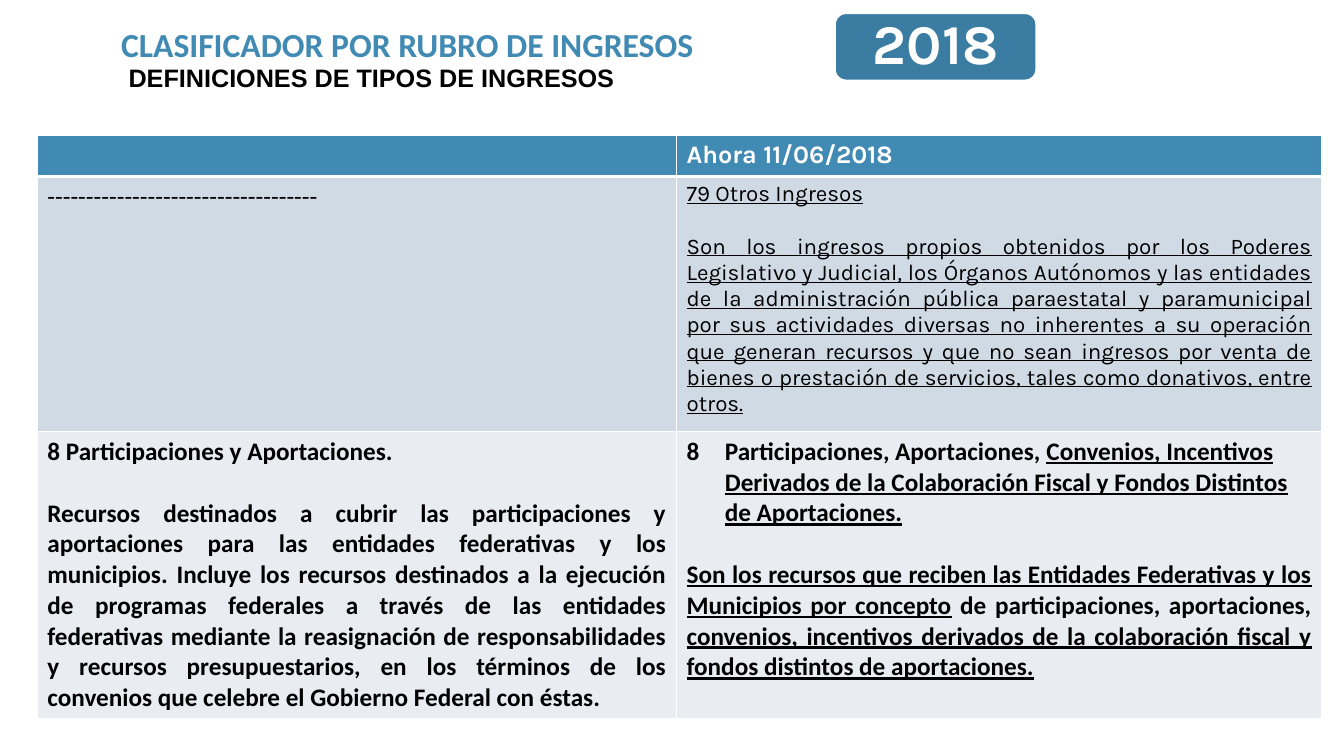
from lxml.etree import SubElement
from pptx import Presentation
from pptx.dml.color import RGBColor
from pptx.enum.shapes import MSO_SHAPE
from pptx.enum.text import MSO_ANCHOR, MSO_AUTO_SIZE, PP_ALIGN
from pptx.oxml import parse_xml
from pptx.oxml.ns import nsdecls, qn
from pptx.util import Inches, Pt

COLORS = {
    "blue": "418AB3", "badge": "3B7DA2", "white": "FFFFFF",
    "black": "000000", "band": "CFDAE5", "light": "E9EDF2",
}
COLUMN_WIDTHS = (6.34, 6.4)
ROW_HEIGHTS = (0.41, 2.53, 2.8)
ROW_FILLS = ("blue", "band", "light")

# A cell is a list of paragraphs; a paragraph is a list of (text, underlined).
OTHER_INCOME = [
    [("79 Otros Ingresos", True)],
    [("Son los ingresos propios obtenidos por los Poderes Legislativo y Judicial, "
      "los Órganos Autónomos y las entidades de la administración pública paraestatal "
      "y paramunicipal por sus actividades diversas no inherentes a su operación que "
      "generan recursos y que no sean ingresos por venta de bienes o prestación de "
      "servicios, tales como donativos, entre otros.", True)],
]
SHARES_BEFORE = [
    [("8 Participaciones y Aportaciones.", False)],
    [("Recursos destinados a cubrir las participaciones y aportaciones para las "
      "entidades federativas y los municipios. Incluye los recursos destinados a la "
      "ejecución de programas federales a través de las entidades federativas mediante "
      "la reasignación de responsabilidades y recursos presupuestarios, en los términos "
      "de los convenios que celebre el Gobierno Federal con éstas.", False)],
]
SHARES_NOW = [
    [("Participaciones, Aportaciones, ", False),
     ("Convenios, Incentivos Derivados de la Colaboración Fiscal y Fondos Distintos "
      "de Aportaciones.", True)],
    [("Son los recursos que reciben las Entidades Federativas y los Municipios por "
      "concepto", True),
     (" de participaciones, aportaciones, ", False),
     ("convenios, incentivos derivados de la colaboración fiscal y fondos distintos "
      "de aportaciones.", True)],
]


def rgb(name):
    return RGBColor.from_string(COLORS[name])


def add_span(para, text, font, size, color, bold=True, underline=False):
    span = para.add_run()
    span.text = text
    span.font.name = font
    span.font.size = Pt(size)
    span.font.bold = bold
    span.font.underline = underline
    span.font.color.rgb = rgb(color)


def place(shape, left, top, width, height):
    shape.left, shape.top = Inches(left), Inches(top)
    shape.width, shape.height = Inches(width), Inches(height)


def write_heading(shape, text, font, size, color, anchor=MSO_ANCHOR.TOP):
    frame = shape.text_frame
    frame.word_wrap = True
    frame.auto_size = MSO_AUTO_SIZE.NONE
    frame.vertical_anchor = anchor
    para = frame.paragraphs[0]
    para.alignment = PP_ALIGN.CENTER
    para.line_spacing = 0.9
    add_span(para, text, font, size, color)


def add_headings(page, left, top):
    title = page.shapes.title
    place(title, left, top, 7.74, 0.46)
    write_heading(title, "CLASIFICADOR POR RUBRO DE INGRESOS", "Calibri", 24, "blue")
    subtitle = page.shapes.add_textbox(
        Inches(left + 0.36), Inches(top + 0.37), Inches(6.31), Inches(0.37))
    write_heading(subtitle, "DEFINICIONES DE TIPOS DE INGRESOS", "Arial", 18, "black")


def add_year_badge(page, left, top, width, height):
    badge = page.shapes.add_shape(
        MSO_SHAPE.ROUNDED_RECTANGLE,
        Inches(left), Inches(top), Inches(width), Inches(height))
    badge.shadow.inherit = False
    badge.fill.solid()
    badge.fill.fore_color.rgb = rgb("badge")
    badge.line.color.rgb = rgb("white")
    badge.line.width = Pt(1.5)
    write_heading(badge, "2018", "Karla", 40, "white", MSO_ANCHOR.MIDDLE)


def style_cell(cell, fill, bottom=1):
    """Fill the cell and give it white borders, the lower one of its own width."""
    cell.fill.solid()
    cell.fill.fore_color.rgb = rgb(fill)
    properties = cell._tc.get_or_add_tcPr()
    for index, side in enumerate("LRTB"):
        points = bottom if side == "B" else 1
        properties.insert(index, parse_xml(
            f'<a:ln{side} {nsdecls("a")} w="{Pt(points)}"><a:solidFill>'
            f'<a:srgbClr val="{COLORS["white"]}"/></a:solidFill></a:ln{side}>'))


def write_cell(cell, paragraphs, font, size, gap=0, color="black", bold=True):
    frame = cell.text_frame
    for index, spans in enumerate(paragraphs):
        para = frame.add_paragraph() if index else frame.paragraphs[0]
        if index:
            para.alignment = PP_ALIGN.JUSTIFY
            para.space_before = Pt(gap)
        for text, underline in spans:
            add_span(para, text, font, size, color, bold, underline)


def number_paragraph(para, start):
    properties = para._p.get_or_add_pPr()
    properties.set("marL", str(Inches(0.38)))
    properties.set("indent", str(-Inches(0.38)))
    SubElement(properties, qn("a:buFont"), typeface="+mj-lt")
    SubElement(properties, qn("a:buAutoNum"), type="arabicPlain", startAt=str(start))


def add_definitions_table(page, left, top):
    table = page.shapes.add_table(
        len(ROW_HEIGHTS), len(COLUMN_WIDTHS), Inches(left), Inches(top),
        Inches(sum(COLUMN_WIDTHS)), Inches(sum(ROW_HEIGHTS))).table
    for column, width in zip(table.columns, COLUMN_WIDTHS):
        column.width = Inches(width)
    for row, height, fill in zip(table.rows, ROW_HEIGHTS, ROW_FILLS):
        row.height = Inches(height)
        for cell in row.cells:
            style_cell(cell, fill, bottom=3 if fill == "blue" else 1)

    write_cell(table.cell(0, 1), [[("Ahora 11/06/2018", False)]], "Karla", 18, color="white")
    write_cell(table.cell(1, 0), [[("-" * 35, False)]], "Calibri", 18, bold=False)
    write_cell(table.cell(1, 1), OTHER_INCOME, "Karla", 16, gap=18.7, bold=False)
    write_cell(table.cell(2, 0), SHARES_BEFORE, "Calibri", 18, gap=22)
    write_cell(table.cell(2, 1), SHARES_NOW, "Calibri", 18, gap=22)
    number_paragraph(table.cell(2, 1).text_frame.paragraphs[0], 8)


def main():
    deck = Presentation()
    deck.slide_width, deck.slide_height = Inches(13.33), Inches(7.5)
    page = deck.slides.add_slide(deck.slide_layouts[5])
    add_headings(page, 0.17, 0.23)
    add_year_badge(page, 8.28, 0.13, 2, 0.67)
    add_definitions_table(page, 0.37, 1.34)
    deck.save("out.pptx")


if __name__ == "__main__":
    main()
